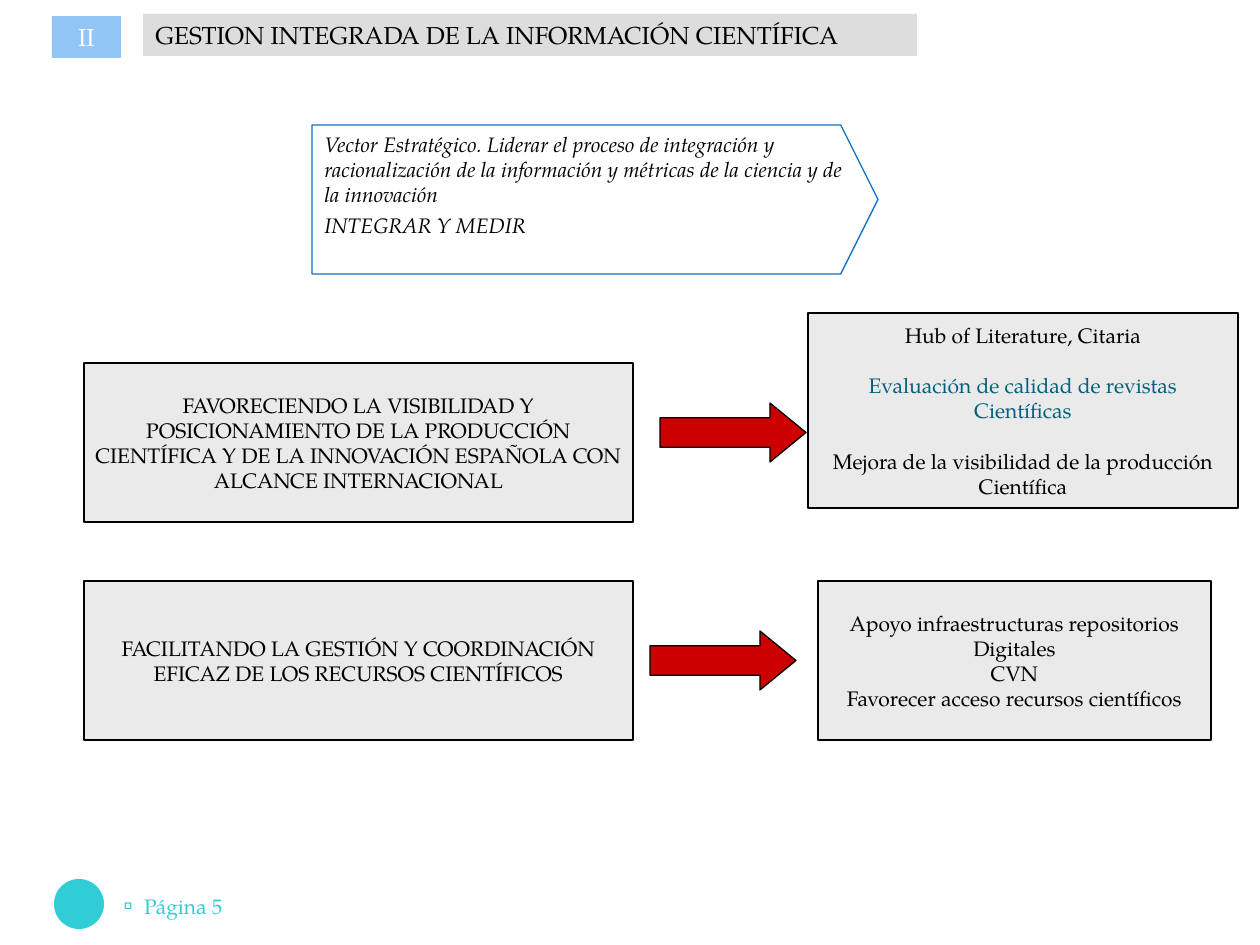
from lxml import etree
from pptx import Presentation
from pptx.dml.color import RGBColor
from pptx.enum.shapes import MSO_SHAPE
from pptx.enum.text import MSO_ANCHOR, PP_ALIGN
from pptx.oxml.ns import qn
from pptx.util import Pt

RECT, OVAL = MSO_SHAPE.RECTANGLE, MSO_SHAPE.OVAL
ARROW, PENTAGON = MSO_SHAPE.RIGHT_ARROW, MSO_SHAPE.PENTAGON
TOP, MIDDLE, BOTTOM = MSO_ANCHOR.TOP, MSO_ANCHOR.MIDDLE, MSO_ANCHOR.BOTTOM
LEFT, CENTER = PP_ALIGN.LEFT, PP_ALIGN.CENTER

THEME = {
    "font": "TeX Gyre Pagella", "title": 14, "body": 12, "line": 0.75,
    "ink": "000000", "white": "FFFFFF", "badge": "91C6F7", "bar": "DDDDDD",
    "box": "EAEAEA", "arrow": "CC0000", "outline": "0F6FC6",
    "accent": "04617B", "footer": "30CDD7",
}
PX = 914400 / 126


def add_box(kind, x, y, w, h, fill, line=None):
    s = slide.shapes.add_shape(kind, *[round(v * PX) for v in (x, y, w, h)])
    s.shadow.inherit = False
    s.fill.solid()
    s.fill.fore_color.rgb = RGBColor.from_string(THEME[fill])
    if line:
        s.line.color.rgb = RGBColor.from_string(THEME[line])
        s.line.width = Pt(THEME["line"])
    else:
        s.line.fill.background()
    return s


def write(s, text, size="body", color="ink", align=LEFT, anchor=TOP, wrap=True):
    tf = s.text_frame
    tf.text = text
    tf.word_wrap = wrap
    tf.vertical_anchor = anchor
    for p in tf.paragraphs:
        p.alignment = align
        for r in p.runs:
            r.font.name = THEME["font"]
            r.font.size = Pt(THEME[size])
            r.font.color.rgb = RGBColor.from_string(THEME[color])
    return tf.paragraphs


prs = Presentation()
prs.slide_width, prs.slide_height = round(1260 * PX), round(945 * PX)
slide = prs.slides.add_slide(prs.slide_layouts[6])

add_box(OVAL, 54, 879, 50, 50, "footer")
write(add_box(RECT, 52, 16, 69, 42, "badge"), "II", "title", "white", CENTER)
write(add_box(RECT, 143, 14, 774, 42, "bar"),
      "GESTION INTEGRADA DE LA INFORMACIÓN CIENTÍFICA", "title")

boxes = [
    (84, 363, 549, 159,
     "FAVORECIENDO LA VISIBILIDAD Y\nPOSICIONAMIENTO DE LA PRODUCCIÓN\n"
     "CIENTÍFICA Y DE LA INNOVACIÓN ESPAÑOLA CON\nALCANCE INTERNACIONAL"),
    (84, 581, 549, 159,
     "FACILITANDO LA GESTIÓN Y COORDINACIÓN\nEFICAZ DE LOS RECURSOS CIENTÍFICOS"),
    (818, 581, 393, 159,
     "Apoyo infraestructuras repositorios\nDigitales\nCVN\n"
     "Favorecer acceso recursos científicos"),
    (808, 313, 430, 195,
     "Hub of Literature, Citaria\nEvaluación de calidad de revistas\nCientíficas\n"
     "Mejora de la visibilidad de la producción\nCientífica"),
]
for x, y, w, h, text in boxes:
    results = write(add_box(RECT, x, y, w, h, "box", "ink"), text,
                    align=CENTER, anchor=MIDDLE, wrap=False)

for p in (results[1], results[3]):
    p.space_before = Pt(14.4)
for p in results[1:3]:
    p.runs[0].font.color.rgb = RGBColor.from_string(THEME["accent"])

for x, y in ((660, 403), (650, 631)):
    s = add_box(ARROW, x, y, 146, 59, "arrow", "ink")
    s.adjustments[0], s.adjustments[1] = 0.5, 0.61

s = add_box(PENTAGON, 312, 125, 566, 149, "white", "outline")
s.adjustments[0] = 0.25
vector = write(s, "Vector Estratégico. Liderar el proceso de integración y racionalización "
               "de la información y métricas de la ciencia y de la innovación\n"
               "INTEGRAR Y MEDIR")
vector[1].space_before = Pt(3)
for p in vector:
    p.runs[0].font.italic = True

s = slide.shapes.add_textbox(*[round(v * PX) for v in (123, 869, 462, 50)])
tf = s.text_frame
tf.margin_left = tf.margin_right = tf.margin_top = tf.margin_bottom = 0
p = write(s, "Página 5", color="footer", anchor=BOTTOM)[0]
pPr = p._p.get_or_add_pPr()
indent = round(21 * PX)
pPr.set("marL", str(indent))
pPr.set("indent", str(-indent))
etree.SubElement(pPr, qn("a:buFont")).set("typeface", THEME["font"])
etree.SubElement(pPr, qn("a:buChar")).set("char", "▫")

prs.save("out.pptx")
